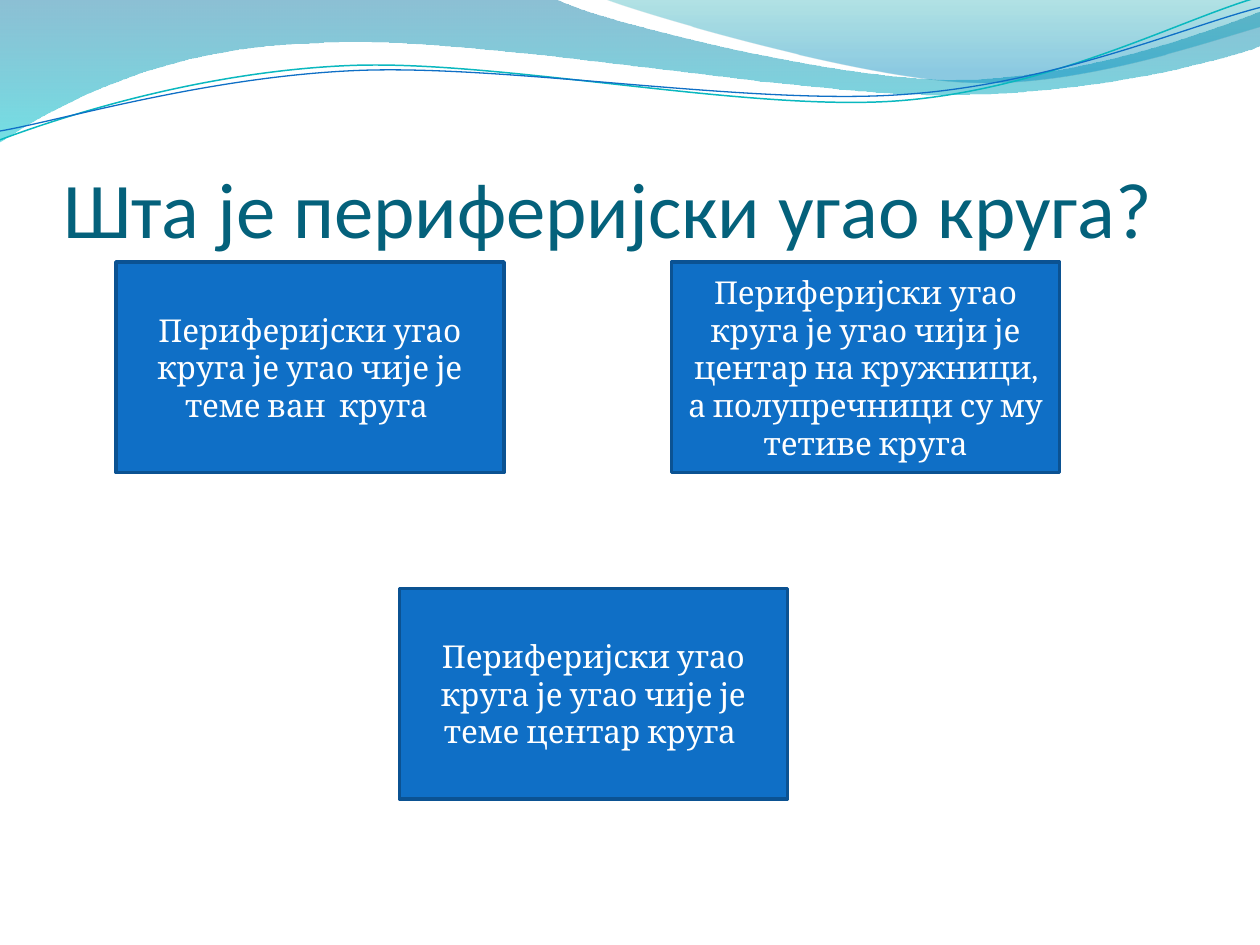
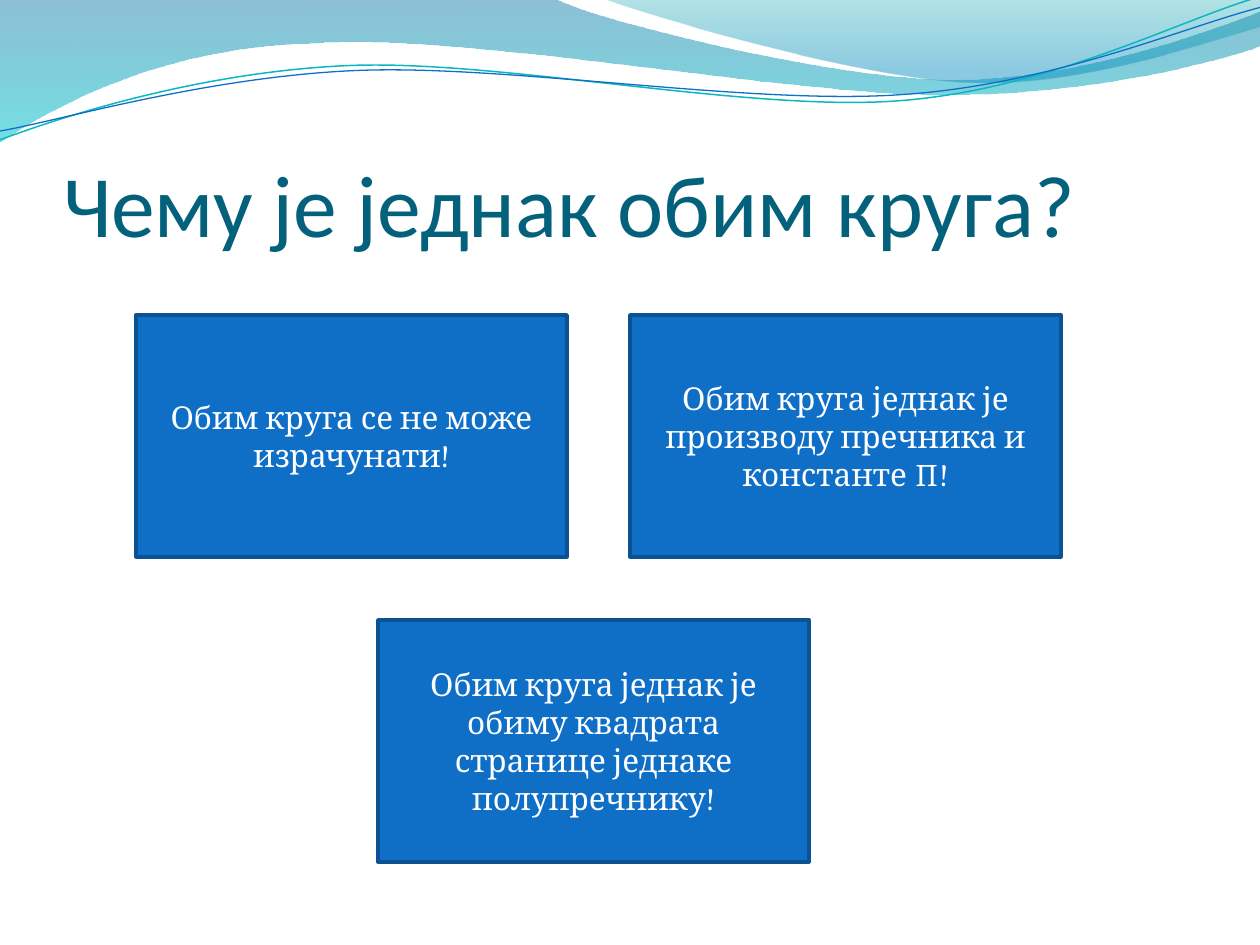
from math import cos, radians, sin

from lxml.etree import SubElement
from pptx import Presentation
from pptx.dml.color import RGBColor
from pptx.enum.shapes import MSO_SHAPE
from pptx.enum.text import MSO_ANCHOR, PP_ALIGN
from pptx.oxml.ns import qn
from pptx.util import Inches, Pt

COLORS = {
    "title": "04617B",
    "answer": "0F6FC6",
    "answer_edge": "0B5292",
    "answer_text": "FFFFFF",
    "teal_line": "0AB8BF",
    "blue_line": "0F6FC6",
    "band_top": "0074A1",
    "band_bottom": "00C6CF",
    "crest_top": "00A1A9",
    "crest_bottom": "008BBF",
}
WAVE_TILT = -2.7

BANDS = [
    {
        "start": (0, 0),
        "segments": [
            [(4.4, -0.01)],
            [(4.76, 0.17), (6.64, 0.63), (7.58, 0.63)],
            [(8.53, 0.63), (9.58, 0.26), (10, 0.09)],
            [(10.01, 0.36)],
            [(9.83, 0.44), (8.7, 0.76), (7.46, 0.75)],
            [(6.22, 0.75), (3.82, 0.28), (2.57, 0.34)],
            [(1.29, 0.36), (0.46, 0.83), (-0.01, 1.13)],
            [(0, 0)],
        ],
        "stops": [(0, "band_top", 45), (1, "band_bottom", 55)],
    },
    {
        "start": (4.79, -0.01),
        "segments": [
            [(5.09, 0.11), (6.82, 0.62), (7.69, 0.65)],
            [(8.56, 0.69), (9.61, 0.32), (10, 0.21)],
            [(10, 0)],
            [(4.79, -0.01)],
        ],
        "stops": [(0, "crest_top", 30), (0.8, "crest_bottom", 45)],
    },
]
WAVE_LINES = [
    {
        "start": (0, 1.11),
        "segments": [
            [(0.48, 0.93), (1.58, 0.57), (2.77, 0.52)],
            [(3.95, 0.47), (5.93, 0.89), (7.13, 0.8)],
            [(8.33, 0.71), (9.38, 0.15), (9.98, -0.02)],
        ],
        "center": (4.99, 0.58),
        "color": "teal_line",
        "width": 0.85,
    },
    {
        "start": (0, 1.04),
        "segments": [
            [(0.47, 0.96), (1.64, 0.61), (2.83, 0.56)],
            [(4.03, 0.51), (5.97, 0.84), (7.17, 0.75)],
            [(8.36, 0.67), (9.41, 0.21), (10, 0.06)],
        ],
        "center": (5, 0.59),
        "color": "blue_line",
        "width": 0.75,
    },
]

QUESTIONS = [
    {
        "title": "Шта је периферијски угао круга?",
        "title_size": 45,
        "answer_size": (3.08, 1.67),
        "answers": [
            (0.92, 2.08, "Периферијски угао круга је угао чије је теме ван  круга "),
            (3.17, 4.67, "Периферијски угао круга је угао чије је теме центар круга "),
            (5.33, 2.08, "Периферијски угао круга је угао чији је центар на кружници, "
                         "а полупречници су му тетиве круга"),
        ],
    },
    {
        "title": "Чему је једнак обим круга?",
        "title_size": 50,
        "answer_size": (3.42, 1.92),
        "answers": [
            (1.08, 2.5, "Обим круга се не може израчунати!"),
            (3, 4.92, "Обим круга једнак је обиму квадрата странице једнаке полупречнику!"),
            (5, 2.5, "Обим круга једнак је производу пречника и константе ∏!"),
        ],
    },
]


def add_curve(slide, start, segments, close, center=(0, 0), tilt=0):
    turn = radians(-tilt)
    nodes = [start] + [node for segment in segments for node in segment]
    outline = []
    for x, y in nodes:
        dx, dy = x - center[0], y - center[1]
        outline.append((Inches(center[0] + dx * cos(turn) - dy * sin(turn)),
                        Inches(center[1] + dx * sin(turn) + dy * cos(turn))))
    builder = slide.shapes.build_freeform(*outline[0])
    builder.add_line_segments(outline[1:], close=close)
    curve = builder.convert_to_shape()
    curve.shadow.inherit = False
    curve.rotation = tilt
    steps = iter(list(curve._element.iter(qn("a:lnTo"))))
    for segment in segments:
        first, *others = [next(steps) for _ in segment]
        if others:
            bezier = first.makeelement(qn("a:cubicBezTo"))
            first.addprevious(bezier)
            for step in (first, *others):
                bezier.append(step[0])
                step.getparent().remove(step)
    return curve


def write_text(frame, text, color, frame_format, font_format):
    for name, value in frame_format.items():
        setattr(frame, name, value)
    run = frame.paragraphs[0].add_run()
    run.text = text
    for name, value in font_format.items():
        setattr(run.font, name, value)
    run.font.color.rgb = RGBColor.from_string(COLORS[color])


deck = Presentation()
deck.slide_width, deck.slide_height = Inches(10), Inches(7.5)

for question in QUESTIONS:
    slide = deck.slides.add_slide(deck.slide_layouts[6])

    for band in BANDS:
        wave = add_curve(slide, band["start"], band["segments"], True)
        wave.line.fill.background()
        wave.fill.gradient()
        wave.fill.gradient_angle = 270
        for stop, (position, color, _) in zip(wave.fill.gradient_stops, band["stops"]):
            stop.position = position
            stop.color.rgb = RGBColor.from_string(COLORS[color])
        tints = wave._element.spPr.iter(qn("a:srgbClr"))
        for tint, (_, _, opacity) in zip(tints, band["stops"]):
            SubElement(tint, qn("a:alpha")).set("val", str(opacity * 1000))

    for wave_line in WAVE_LINES:
        wave = add_curve(slide, wave_line["start"], wave_line["segments"], False,
                         wave_line["center"], WAVE_TILT)
        wave.fill.background()
        wave.line.color.rgb = RGBColor.from_string(COLORS[wave_line["color"]])
        wave.line.width = Pt(wave_line["width"])

    title = slide.shapes.add_textbox(Inches(0.5), Inches(0.77), Inches(9.08), Inches(1.25))
    write_text(
        title.text_frame, question["title"], "title",
        {"word_wrap": True, "vertical_anchor": MSO_ANCHOR.BOTTOM, "margin_left": 0,
         "margin_top": Inches(0.05), "margin_right": 0, "margin_bottom": 0},
        {"name": "Calibri", "size": Pt(question["title_size"])},
    )

    width, height = question["answer_size"]
    for left, top, text in question["answers"]:
        answer = slide.shapes.add_shape(
            MSO_SHAPE.RECTANGLE, Inches(left), Inches(top), Inches(width), Inches(height))
        answer.shadow.inherit = False
        answer.fill.solid()
        answer.fill.fore_color.rgb = RGBColor.from_string(COLORS["answer"])
        answer.line.color.rgb = RGBColor.from_string(COLORS["answer_edge"])
        answer.line.width = Pt(2)
        write_text(
            answer.text_frame, text, "answer_text",
            {"word_wrap": True, "vertical_anchor": MSO_ANCHOR.MIDDLE},
            {"name": "Cambria", "size": Pt(18)},
        )
        answer.text_frame.paragraphs[0].alignment = PP_ALIGN.CENTER

deck.save("out.pptx")
